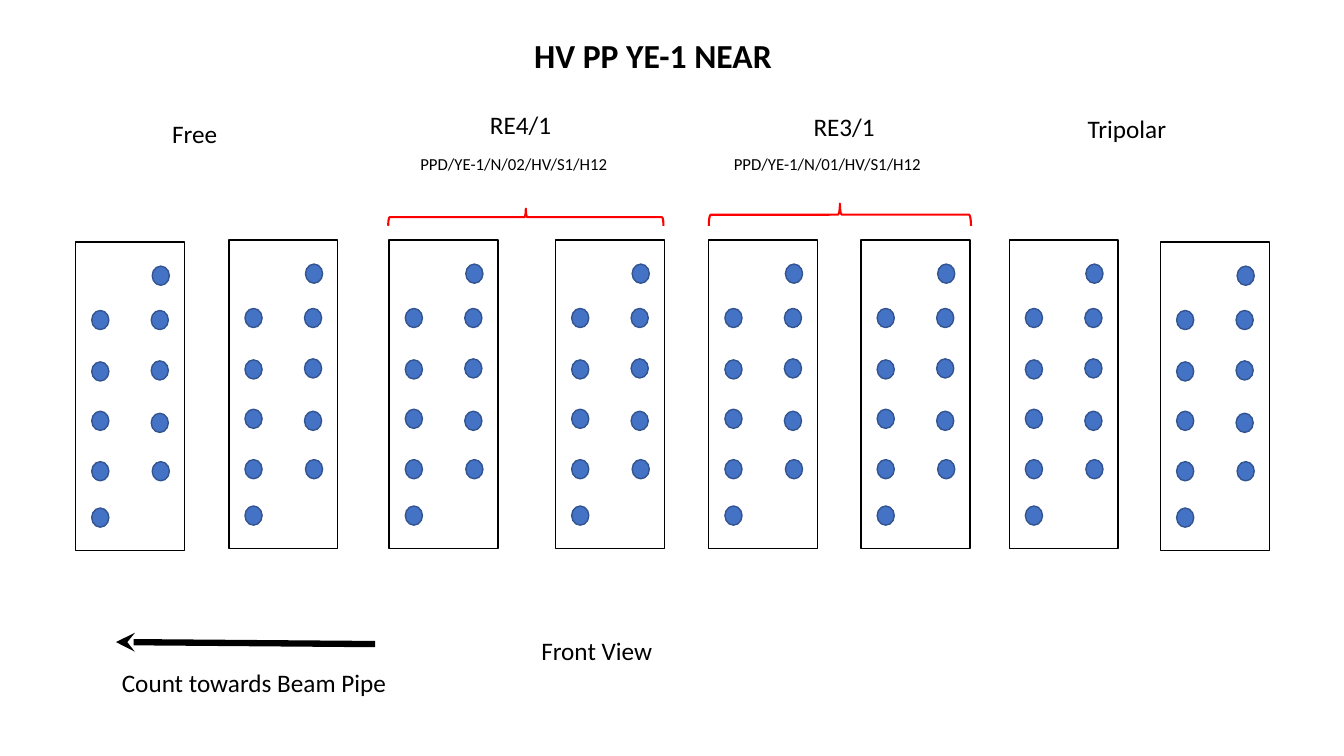
"""Builds the HV patch panel slide: eight connector panels with labels and braces."""
from lxml import etree
from pptx import Presentation
from pptx.dml.color import RGBColor
from pptx.enum.shapes import MSO_CONNECTOR, MSO_SHAPE
from pptx.enum.text import MSO_AUTO_SIZE
from pptx.oxml.ns import qn
from pptx.util import Inches, Pt

RECT, OVAL, BRACE = MSO_SHAPE.RECTANGLE, MSO_SHAPE.OVAL, MSO_SHAPE.LEFT_BRACE
STRAIGHT = MSO_CONNECTOR.STRAIGHT
FIT_SHAPE = MSO_AUTO_SIZE.SHAPE_TO_FIT_TEXT

BLACK = RGBColor(0x00, 0x00, 0x00)
RED = RGBColor(0xFF, 0x00, 0x00)
BLUE = RGBColor(0x44, 0x72, 0xC4)
DARK_BLUE = RGBColor(0x32, 0x54, 0x91)
FONT = "Calibri"

PANELS = [(0.75, 2.4), (2.27, 2.38), (3.86, 2.38), (5.51, 2.38),
          (7.03, 2.38), (8.54, 2.38), (10.01, 2.38), (11.51, 2.4)]
PANEL_W, PANEL_H = 1.08, 3.06
DOT_W, DOT_H = 0.17, 0.19
DOTS = [(0.76, 0.24), (0.75, 0.68), (0.75, 1.18), (0.75, 1.7), (0.76, 2.18),
        (0.16, 0.68), (0.16, 1.19), (0.16, 1.68), (0.16, 2.18), (0.16, 2.64)]

LABELS = [
    ("HV PP YE-1 NEAR", 5.2, 0.3, 3.02, 0.5, 24, True, True),
    ("Free", 1.61, 1.12, 1.57, 0.4, 18, False, True),
    ("RE4/1", 4.76, 1.04, 0.82, 0.4, 18, False, True),
    ("RE3/1", 7.97, 1.06, 0.82, 0.4, 18, False, True),
    ("Tripolar", 10.69, 1.08, 1.57, 0.4, 18, False, True),
    ("PPD/YE-1/N/02/HV/S1/H12", 4.07, 1.48, 2.4, 0.3, 12, False, True),
    ("PPD/YE-1/N/01/HV/S1/H12", 7.18, 1.48, 2.4, 0.3, 12, False, True),
    ("Front View", 5.27, 6.25, 1.31, 0.4, 18, False, False),
    ("Count towards Beam Pipe", 1.11, 6.57, 2.85, 0.4, 18, False, False),
]
BRACES = [(5.13, 0.79, 0.17, 2.73), (8.22, 0.83, 0.22, 2.6)]
ARROW = (3.72, 6.39, 1.15, 6.37)


def add_shape(shapes, kind, box, line, width, fill=None):
    shape = shapes.add_shape(kind, *map(Inches, box))
    shape.shadow.inherit = False
    if fill is None:
        shape.fill.background()
    else:
        shape.fill.solid()
        shape.fill.fore_color.rgb = fill
    shape.line.color.rgb = line
    shape.line.width = Pt(width)
    return shape


def add_panel(s, left, top):
    shapes = s.shapes.add_group_shape().shapes
    add_shape(shapes, RECT, (left, top, PANEL_W, PANEL_H), BLACK, 1)
    for dx, dy in DOTS:
        add_shape(shapes, OVAL, (left + dx, top + dy, DOT_W, DOT_H),
                  DARK_BLUE, 1, BLUE)


def add_label(s, text, left, top, width, height, size, bold, wrap):
    box = s.shapes.add_textbox(*map(Inches, (left, top, width, height)))
    tf = box.text_frame
    tf.word_wrap = wrap
    tf.auto_size = FIT_SHAPE
    r = tf.paragraphs[0].add_run()
    r.text = text
    r.font.name = FONT
    r.font.size = Pt(size)
    r.font.bold = bold
    r.font.color.rgb = BLACK


def add_arrow(s):
    arrow = s.shapes.add_connector(STRAIGHT, *map(Inches, ARROW))
    arrow.line.color.rgb = BLACK
    arrow.line.width = Pt(4.5)
    etree.SubElement(arrow.line._get_or_add_ln(), qn("a:tailEnd"), type="stealth")
    etree.SubElement(arrow._element.spPr, qn("a:effectLst"))


def main():
    prs = Presentation()
    prs.slide_width, prs.slide_height = Inches(13.33), Inches(7.5)
    s = prs.slides.add_slide(prs.slide_layouts[6])
    for left, top in PANELS:
        add_panel(s, left, top)
    for box in BRACES:
        add_shape(s.shapes, BRACE, box, RED, 1.5).rotation = 90
    for label in LABELS:
        add_label(s, *label)
    add_arrow(s)
    prs.save("out.pptx")


if __name__ == "__main__":
    main()
